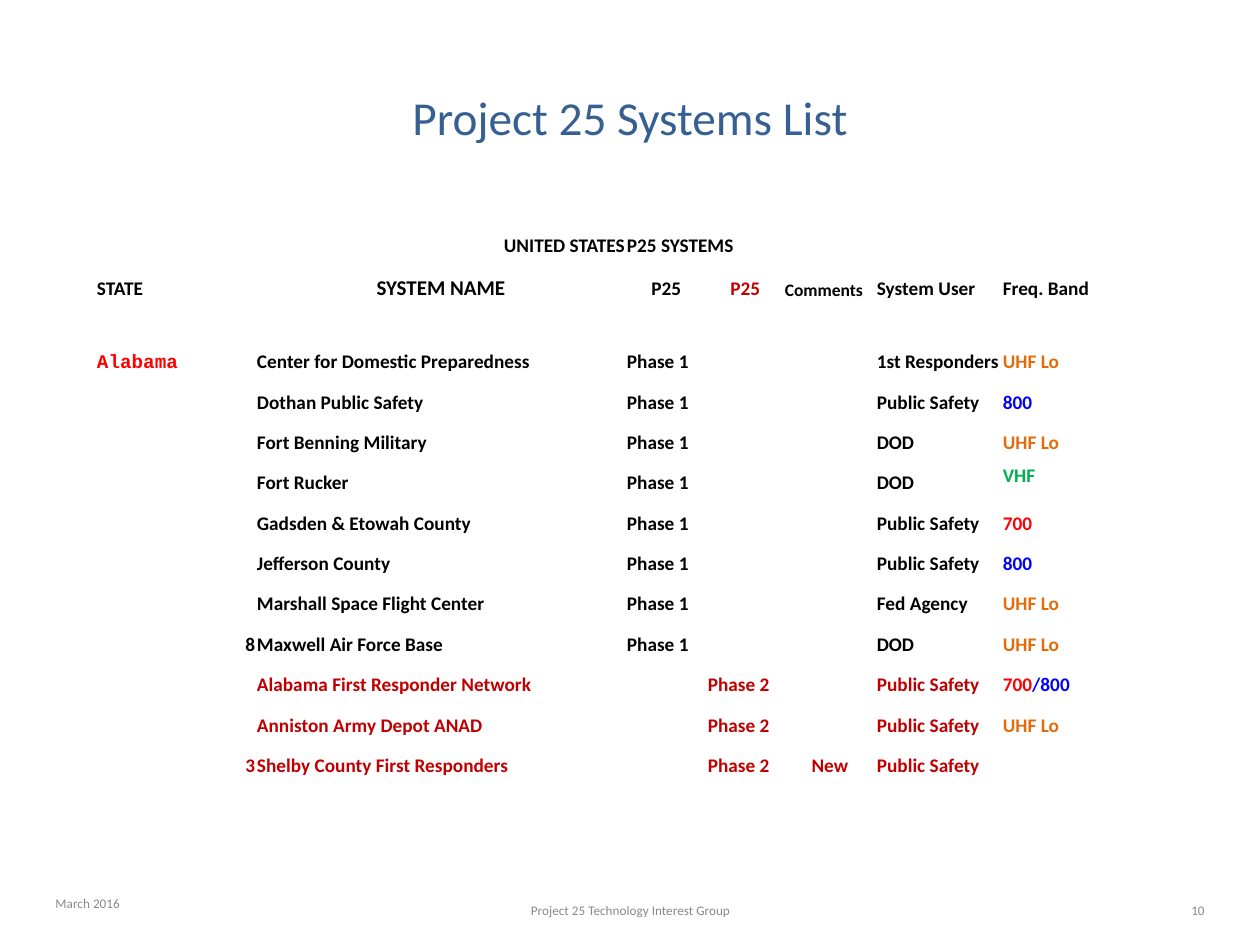
from pptx import Presentation
from pptx.dml.color import RGBColor as Rgb
from pptx.enum.text import MSO_ANCHOR as Anchor, PP_ALIGN as Align
from pptx.util import Emu, Pt

HUES = {"black": "000000", "dark": "C00000", "red": "FF0000", "orange": "E26B0A",
        "blue": "0000FF", "green": "00B050", "gray": "898989", "title": "376092"}
L, C, R = Align.LEFT, Align.CENTER, Align.RIGHT

TITLE = "Project 25 Systems List"
NOTES = [("March 2016", 43, 878, 294, L),
         ("Project 25 Technology Interest Group", 431, 885, 399, C),
         ("10", 924, 885, 293, R)]
HEADS = [("STATE", L, 11, "black"), ("SYSTEM NAME", C, 12, "black"),
         ("P25", C, 11, "black"), ("P25", C, 11, "dark"),
         ("Comments", L, 10, "black"), ("System User", L, 11, "black"),
         ("Freq. Band", L, 11, "black")]
UHF = [("UHF Lo", "orange")]
B700, B800 = [("700", "red")], [("800", "blue")]
VHF = [("VHF", "green")]
BOTH = [("700", "red"), ("/800", "blue")]
SYSTEMS = [
    ("Alabama", "Center for Domestic Preparedness", 1, "", "1st Responders", UHF),
    ("", "Dothan Public Safety", 1, "", "Public Safety", B800),
    ("", "Fort Benning Military", 1, "", "DOD", UHF),
    ("", "Fort Rucker", 1, "", "DOD", VHF),
    ("", "Gadsden & Etowah County", 1, "", "Public Safety", B700),
    ("", "Jefferson County", 1, "", "Public Safety", B800),
    ("", "Marshall Space Flight Center", 1, "", "Fed Agency", UHF),
    ("8", "Maxwell Air Force Base", 1, "", "DOD", UHF),
    ("", "Alabama First Responder Network", 2, "", "Public Safety", BOTH),
    ("", "Anniston Army Depot ANAD", 2, "", "Public Safety", UHF),
    ("3", "Shelby County First Responders", 2, "New", "Public Safety", []),
]
COLS = [160, 370, 81, 77, 92, 126, 100]
TOPS = [40, 43, 73]
LEFT, TOP, HIGH = 96, 218, 560


def px(n):
    return Emu(round(n * 914400 / 126))


def write(frame, runs, size, align=L, bold=False, font="Calibri"):
    para = frame.paragraphs[0]
    para.alignment = align
    for text, hue in runs:
        run = para.add_run()
        run.text = text
        run.font.size = Pt(size)
        run.font.name = font
        run.font.bold = bold
        run.font.color.rgb = Rgb.from_string(HUES[hue])


def put(row, col, runs, align=L, size=11, font="Calibri"):
    write(table.cell(row, col).text_frame, runs, size, align, True, font)


deck = Presentation()
deck.slide_width, deck.slide_height = px(1260), px(945)
slide = deck.slides.add_slide(deck.slide_layouts[5])

title = slide.shapes.title
title.left, title.top, title.width, title.height = map(px, (63, 38, 1134, 158))
title.text_frame.vertical_anchor = Anchor.MIDDLE
write(title.text_frame, [(TITLE, "title")], 27, C)

for text, left, top, wide, align in NOTES:
    frame = slide.shapes.add_textbox(px(left), px(top), px(wide), px(50)).text_frame
    frame.word_wrap = True
    frame.vertical_anchor = Anchor.MIDDLE
    write(frame, [(text, "gray")], 7.5, align)

count = len(SYSTEMS) + 2
table = slide.shapes.add_table(count, len(COLS), px(LEFT), px(TOP),
                               px(sum(COLS)), px(HIGH)).table
table.first_row = table.horz_banding = False
for col, wide in zip(table.columns, COLS):
    col.width = px(wide)
step = (HIGH - sum(TOPS)) / (count - len(TOPS))
for i, row in enumerate(table.rows):
    row.height = px(TOPS[i] if i < len(TOPS) else step)
for cell in table.iter_cells():
    cell.fill.background()
    cell.vertical_anchor = Anchor.BOTTOM
    cell.margin_left = cell.margin_right = cell.margin_top = px(1)
    cell.margin_bottom = 0

table.cell(0, 2).merge(table.cell(0, 3))
put(0, 1, [("UNITED STATES", "black")], R)
put(0, 2, [("P25 SYSTEMS", "black")])
for i, (text, align, size, hue) in enumerate(HEADS):
    put(1, i, [(text, hue)], align, size)

for i, (state, name, phase, note, user, band) in enumerate(SYSTEMS, 2):
    hue = "black" if phase == 1 else "dark"
    if state.isdigit():
        put(i, 0, [(state, hue)], R)
    elif state:
        put(i, 0, [(state, "red")], font="Courier New")
    put(i, 1, [(name, hue)])
    put(i, 1 + phase, [(f"Phase {phase}", hue)])
    if note:
        put(i, 4, [(note, hue)], C)
    put(i, 5, [(user, hue)])
    put(i, 6, band)
    if band == VHF:
        table.cell(i, 6).vertical_anchor = Anchor.MIDDLE

deck.save("out.pptx")
